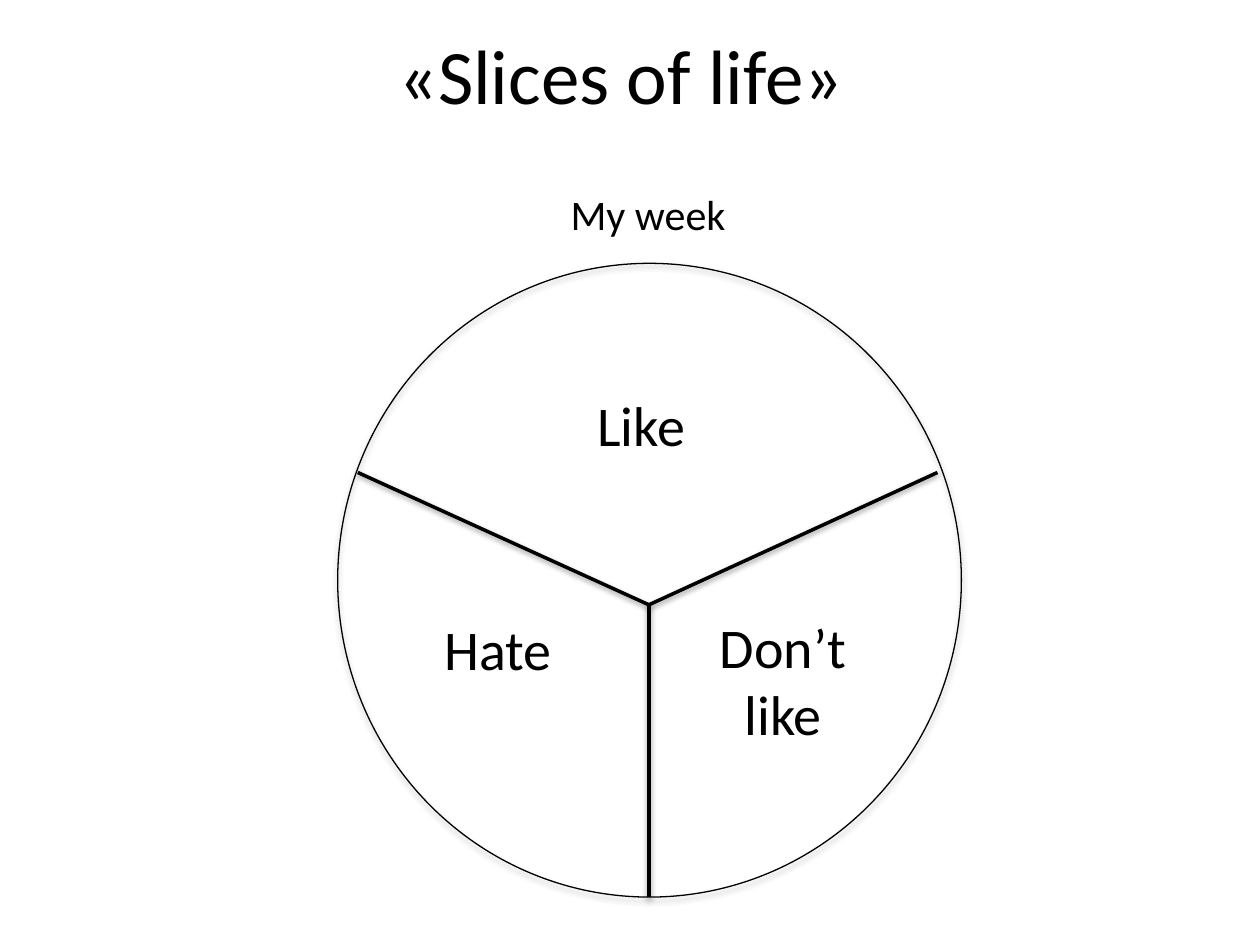
import lxml.etree
import pptx
import pptx.dml.color
import pptx.enum.shapes
import pptx.enum.text
import pptx.oxml.ns
import pptx.util
from pptx.util import Inches

INK = "000000"
FONT = "Calibri"


def color(hex_string):
    """Turn a hex string into a colour."""
    return pptx.dml.color.RGBColor.from_string(hex_string)


def add_shadow(shape, distance, opacity):
    """Give a shape a soft shadow straight below it."""
    qualified = pptx.oxml.ns.qn
    effects = lxml.etree.SubElement(shape._element.spPr, qualified("a:effectLst"))
    shadow = lxml.etree.SubElement(
        effects, qualified("a:outerShdw"), blurRad=str(pptx.util.Pt(3.15)),
        dist=str(pptx.util.Pt(distance)), dir="5400000", rotWithShape="0")
    ink = lxml.etree.SubElement(shadow, qualified("a:srgbClr"), val=INK)
    lxml.etree.SubElement(ink, qualified("a:alpha"), val=str(opacity * 1000))


def style_line(line, width):
    """Set the colour and width of a line."""
    line.color.rgb = color(INK)
    line.width = pptx.util.Pt(width)


def write(text_frame, lines, size, alignment=pptx.enum.text.PP_ALIGN.CENTER):
    """Write one paragraph for each line of text."""
    for index, line in enumerate(lines):
        paragraph = text_frame.add_paragraph() if index else text_frame.paragraphs[0]
        paragraph.alignment = alignment
        run = paragraph.add_run()
        run.text = line
        run.font.name = FONT
        run.font.size = pptx.util.Pt(size)
        run.font.color.rgb = color(INK)


def add_label(shapes, box, lines, size, alignment=pptx.enum.text.PP_ALIGN.CENTER):
    """Add a text box that fits its unwrapped lines."""
    label = shapes.add_textbox(*map(Inches, box))
    label.text_frame.word_wrap = False
    label.text_frame.auto_size = pptx.enum.text.MSO_AUTO_SIZE.SHAPE_TO_FIT_TEXT
    write(label.text_frame, lines, size, alignment)


def add_title(slide, box, text):
    """Place the slide title in its placeholder."""
    title = slide.shapes.title
    title.left, title.top, title.width, title.height = map(Inches, box)
    title.text_frame.vertical_anchor = pptx.enum.text.MSO_ANCHOR.MIDDLE
    write(title.text_frame, [text], 44)


def add_sliced_circle(slide, box):
    """Draw a circle cut into three labelled slices."""
    left, top, width, height = box
    shapes = slide.shapes.add_group_shape().shapes
    circle = shapes.add_shape(pptx.enum.shapes.MSO_SHAPE.OVAL, *map(Inches, box))
    circle.fill.background()
    style_line(circle.line, 0.75)
    add_shadow(circle, 1.8, 35)

    hub = (left + 2.47, top + 2.71)
    rim = [(left + 0.16, top + 1.66), (hub[0], top + height), (left + width - 0.19, top + 1.66)]
    for end in rim:
        cut = shapes.add_connector(
            pptx.enum.shapes.MSO_CONNECTOR.STRAIGHT, *map(Inches, hub + end))
        style_line(cut.line, 2)
        add_shadow(cut, 1.6, 38)

    labels = [
        (1.95, 0.96, 0.92, 0.64, ["Like"]),
        (0.74, 2.74, 1.07, 0.64, ["Hate"]),
        (2.93, 2.72, 1.21, 1.18, ["Don’t ", "like"]),
    ]
    for across, down, label_width, label_height, lines in labels:
        add_label(shapes, (left + across, top + down, label_width, label_height), lines, 32)


def main():
    """Build and save the slide."""
    presentation = pptx.Presentation()
    presentation.slide_width = Inches(10)
    presentation.slide_height = Inches(7.5)
    slide = presentation.slides.add_slide(presentation.slide_layouts[5])
    add_title(slide, (0.43, -0.04, 9, 1.25), "«Slices of life»")
    add_label(slide.shapes, (4.43, 1.45, 1.45, 0.5), ["My week"], 24,
              pptx.enum.text.PP_ALIGN.LEFT)
    add_sliced_circle(slide, (2.68, 2.09, 4.95, 5.03))
    presentation.save("out.pptx")


if __name__ == "__main__":
    main()
